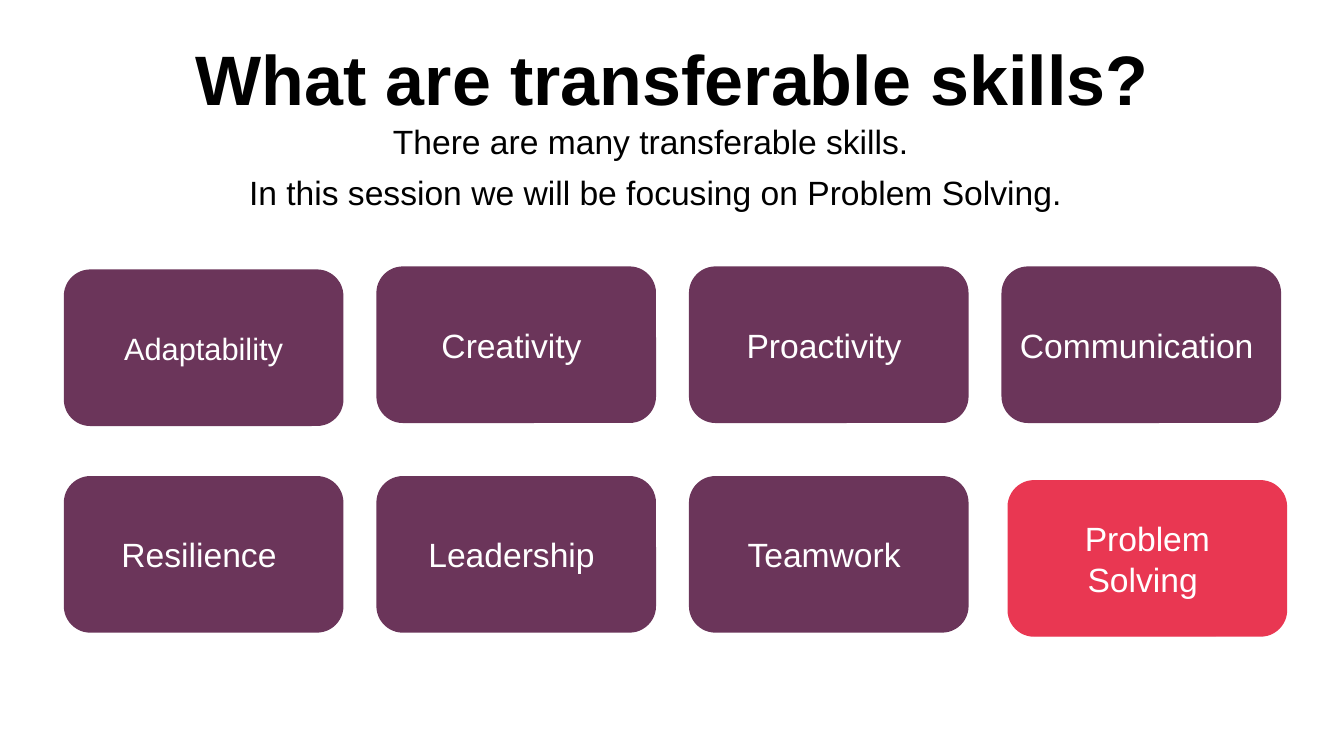
from pptx import Presentation
from pptx.dml.color import RGBColor
from pptx.enum.shapes import MSO_SHAPE
from pptx.enum.text import MSO_ANCHOR, PP_ALIGN
from pptx.util import Inches, Pt

ROUNDED = MSO_SHAPE.ROUNDED_RECTANGLE
CENTER = PP_ALIGN.CENTER
TOP, MIDDLE = MSO_ANCHOR.TOP, MSO_ANCHOR.MIDDLE

FONT = "Arial"
COLORS = {"text": "000000", "card": "6B355A", "focus": "E93752", "card_text": "FFFFFF"}

TITLE = "What are transferable skills?"
INTRO = [
    "There are many transferable skills. ",
    "In this session we will be focusing on Problem Solving.",
]
SKILLS = [
    ["Adaptability", "Creativity ", "Proactivity ", "Communication "],
    ["Resilience ", "Leadership ", "Teamwork ", "Problem Solving "],
]
FOCUS = "Problem Solving "
TEXT_SIZE = 24
SMALLER_TEXT = {"Adaptability": 22}
OFFSETS = {"Adaptability": (0, 0.03), FOCUS: (0.06, 0.04)}

GRID_LEFT, GRID_TOP = 0.64, 2.65
COLUMN_STEP, ROW_STEP = 3.1, 2.08
CARD_WIDTH, CARD_HEIGHT = 2.76, 1.54


def add_text(paragraph, text, size, color, bold=False):
    paragraph.alignment = CENTER
    run = paragraph.add_run()
    run.text = text
    run.font.name = FONT
    run.font.size = Pt(size)
    run.font.bold = bold
    run.font.color.rgb = RGBColor.from_string(COLORS[color])


def add_title(slide):
    title = slide.shapes.title
    title.left, title.top = Inches(0.92), Inches(0.4)
    title.width, title.height = Inches(11.5), Inches(1.45)
    title.text_frame.vertical_anchor = TOP
    title.text_frame.word_wrap = True
    paragraph = title.text_frame.paragraphs[0]
    paragraph.line_spacing = 0.9
    add_text(paragraph, TITLE, 50, "text", bold=True)


def add_intro(slide):
    box = slide.shapes.add_textbox(Inches(0.75), Inches(1.2), Inches(11.5), Inches(4.38))
    frame = box.text_frame
    frame.word_wrap = True
    for index, line in enumerate(INTRO):
        paragraph = frame.add_paragraph() if index else frame.paragraphs[0]
        paragraph.line_spacing = 0.9
        if index:
            paragraph.space_before = Pt(10)
        add_text(paragraph, line, TEXT_SIZE, "text")


def add_card(slide, skill, row, column):
    shift_x, shift_y = OFFSETS.get(skill, (0, 0))
    card = slide.shapes.add_shape(
        ROUNDED,
        Inches(GRID_LEFT + column * COLUMN_STEP + shift_x),
        Inches(GRID_TOP + row * ROW_STEP + shift_y),
        Inches(CARD_WIDTH),
        Inches(CARD_HEIGHT),
    )
    color = RGBColor.from_string(COLORS["focus" if skill == FOCUS else "card"])
    card.shadow.inherit = False
    card.fill.solid()
    card.fill.fore_color.rgb = color
    card.line.color.rgb = color
    card.line.width = Pt(1)
    card.text_frame.word_wrap = True
    card.text_frame.vertical_anchor = MIDDLE
    size = SMALLER_TEXT.get(skill, TEXT_SIZE)
    add_text(card.text_frame.paragraphs[0], skill, size, "card_text")


def main():
    presentation = Presentation()
    presentation.slide_width = Inches(13.33)
    presentation.slide_height = Inches(7.5)
    slide = presentation.slides.add_slide(presentation.slide_layouts[5])
    add_title(slide)
    add_intro(slide)
    for row, skills in enumerate(SKILLS):
        for column, skill in enumerate(skills):
            add_card(slide, skill, row, column)
    presentation.save("out.pptx")


if __name__ == "__main__":
    main()
